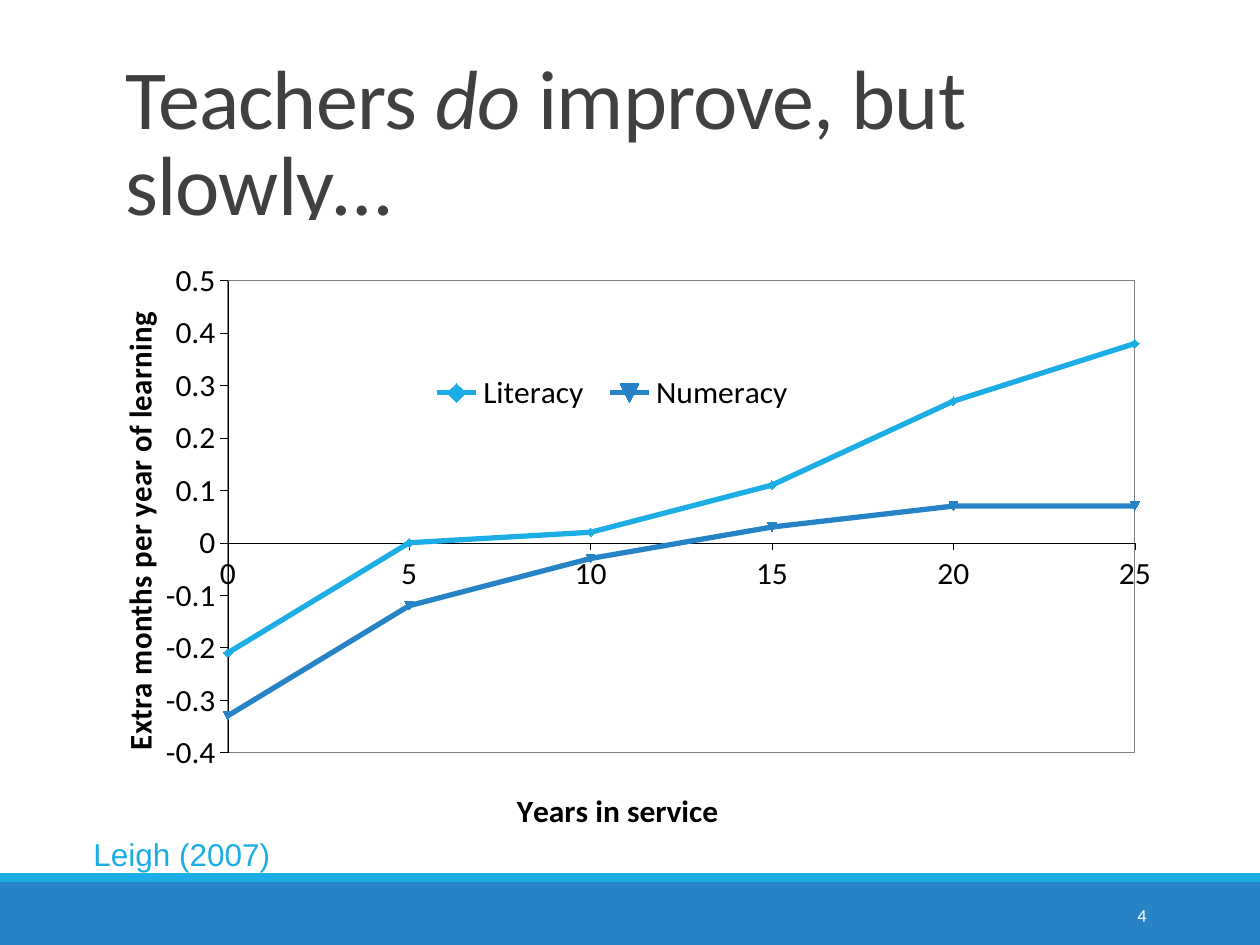
"""Build a slide with a line chart of teacher improvement by years in service."""
from lxml import etree
from pptx import Presentation
from pptx import util as u
from pptx.chart import data as chart_data
from pptx.dml.color import RGBColor
from pptx.enum import chart as charts, shapes, text
from pptx.oxml import ns, parse_xml

COLOURS = {"cyan": "1CADE4", "blue": "2683C6", "title": "404040",
           "grey": "808080", "black": "000000", "white": "FFFFFF"}
RGB = {name: RGBColor.from_string(value) for name, value in COLOURS.items()}
SCALE = 914400 / 126
SERIES = {
    "Literacy": ("cyan", [-0.21, 0, 0.02, 0.11, 0.27, 0.38]),
    "Numeracy": ("blue", [-0.33, -0.12, -0.03, 0.03, 0.07, 0.07]),
}


def box(*lengths):
    return [u.Emu(round(length * SCALE)) for length in lengths]


def set_layout(element, index, **values):
    for layout in element.findall(ns.qn("c:layout")):
        element.remove(layout)
    layout = etree.Element(ns.qn("c:layout"))
    manual = etree.SubElement(layout, ns.qn("c:manualLayout"))
    for tag, value in values.items():
        etree.SubElement(manual, ns.qn(f"c:{tag}")).set("val", str(value))
    element.insert(index, layout)


presentation = Presentation()
presentation.slide_width, presentation.slide_height = box(1260, 945)
slide = presentation.slides.add_slide(presentation.slide_layouts[5])

for colour, top, height in [("blue", 882, 63), ("cyan", 873, 9)]:
    bar = slide.shapes.add_shape(shapes.MSO_SHAPE.RECTANGLE, *box(0, top, 1260, height))
    bar.shadow.inherit = False
    bar.fill.solid()
    bar.fill.fore_color.rgb = RGB[colour]
    bar.line.fill.background()

title = slide.shapes.title
title.left, title.top, title.width, title.height = box(113, 39, 1040, 200)
title.text_frame.auto_size = text.MSO_AUTO_SIZE.NONE
title.text_frame.vertical_anchor = text.MSO_ANCHOR.BOTTOM
paragraph = title.text_frame.paragraphs[0]
paragraph.alignment = text.PP_ALIGN.LEFT
paragraph.line_spacing = 0.85
for words, italic in [("Teachers ", False), ("do ", True), ("improve, but slowly…", False)]:
    run = paragraph.add_run()
    run.text = words
    for name, value in {"name": "Calibri", "size": u.Pt(48), "italic": italic}.items():
        setattr(run.font, name, value)
    run.font.color.rgb = RGB["title"]
    run.font._element.set("spc", "-50")

labels = [
    ("4", (1023, 890, 136, 50), "Calibri", 10.5, "white", text.PP_ALIGN.RIGHT, text.MSO_ANCHOR.MIDDLE),
    ("Leigh (2007)", (81, 829, 267, 50), "Arial", 18, "cyan", text.PP_ALIGN.LEFT, text.MSO_ANCHOR.TOP),
]
for words, place, font_name, size, colour, alignment, anchor in labels:
    frame = slide.shapes.add_textbox(*box(*place)).text_frame
    frame.word_wrap = True
    frame.vertical_anchor = anchor
    paragraph = frame.paragraphs[0]
    paragraph.text = words
    paragraph.alignment = alignment
    for name, value in {"name": font_name, "size": u.Pt(size)}.items():
        setattr(paragraph.font, name, value)
    paragraph.font.color.rgb = RGB[colour]

data = chart_data.XyChartData()
for name, (colour, values) in SERIES.items():
    series = data.add_series(name)
    for index, value in enumerate(values):
        series.add_data_point(5 * index, value)
chart = slide.shapes.add_chart(charts.XL_CHART_TYPE.XY_SCATTER_LINES,
                               *box(84, 220, 1124, 620), data).chart
chart.has_title = False
for name, value in {"name": "Calibri", "size": u.Pt(18)}.items():
    setattr(chart.font, name, value)
chart.font.color.rgb = RGB["black"]

for series in chart.plots[0].series:
    colour = RGB[SERIES[series.name][0]]
    series.smooth = False
    series.format.line.width = u.Pt(3)
    series.format.line.color.rgb = colour
    series.marker.size = 5
    series.marker.format.fill.solid()
    series.marker.format.fill.fore_color.rgb = colour
    series.marker.format.line.color.rgb = colour

axes = [
    (chart.category_axis, "Years in service", 0, 25, 5, (0.38, 0.93)),
    (chart.value_axis, "Extra months per year of learning", -0.4, 0.5, 0.1, (0.025, 0.158)),
]
for axis, words, low, high, step, (x, y) in axes:
    settings = {"minimum_scale": low, "maximum_scale": high, "major_unit": step,
                "has_major_gridlines": False,
                "major_tick_mark": charts.XL_TICK_MARK.OUTSIDE,
                "minor_tick_mark": charts.XL_TICK_MARK.NONE,
                "tick_label_position": charts.XL_TICK_LABEL_POSITION.NEXT_TO_AXIS}
    for name, value in settings.items():
        setattr(axis, name, value)
    axis.tick_labels.number_format = "General"
    axis.tick_labels.number_format_is_linked = False
    axis.format.line.width = u.Pt(0.25)
    axis.format.line.color.rgb = RGB["black"]
    axis.axis_title.text_frame.text = words
    font = axis.axis_title.text_frame.paragraphs[0].runs[0].font
    for name, value in {"name": "Calibri", "size": u.Pt(18), "bold": True}.items():
        setattr(font, name, value)
    font.color.rgb = RGB["black"]
    set_layout(axis.axis_title._element, 1, xMode="edge", yMode="edge", x=x, y=y)

chart.has_legend = True
chart.legend.position = charts.XL_LEGEND_POSITION.TOP
chart.legend.include_in_layout = False
set_layout(chart.legend._element, 1, xMode="edge", yMode="edge", x=0.3, y=0.25, w=0.34, h=0.07)

chart_space = chart._chartSpace
plot_area = chart_space.chart.plotArea
set_layout(plot_area, 0, layoutTarget="inner", xMode="edge", yMode="edge",
           x=0.128, y=0.1, w=0.807, h=0.778)
plot_area.append(parse_xml(
    f'<c:spPr {ns.nsdecls("c", "a")}><a:noFill/><a:ln w="6350"><a:solidFill>'
    f'<a:srgbClr val="{COLOURS["grey"]}"/></a:solidFill></a:ln></c:spPr>'))
chart_space.chart.addnext(parse_xml(
    f'<c:spPr {ns.nsdecls("c", "a")}><a:solidFill><a:srgbClr val="{COLOURS["white"]}"/>'
    '</a:solidFill><a:ln><a:noFill/></a:ln></c:spPr>'))

presentation.save("out.pptx")
